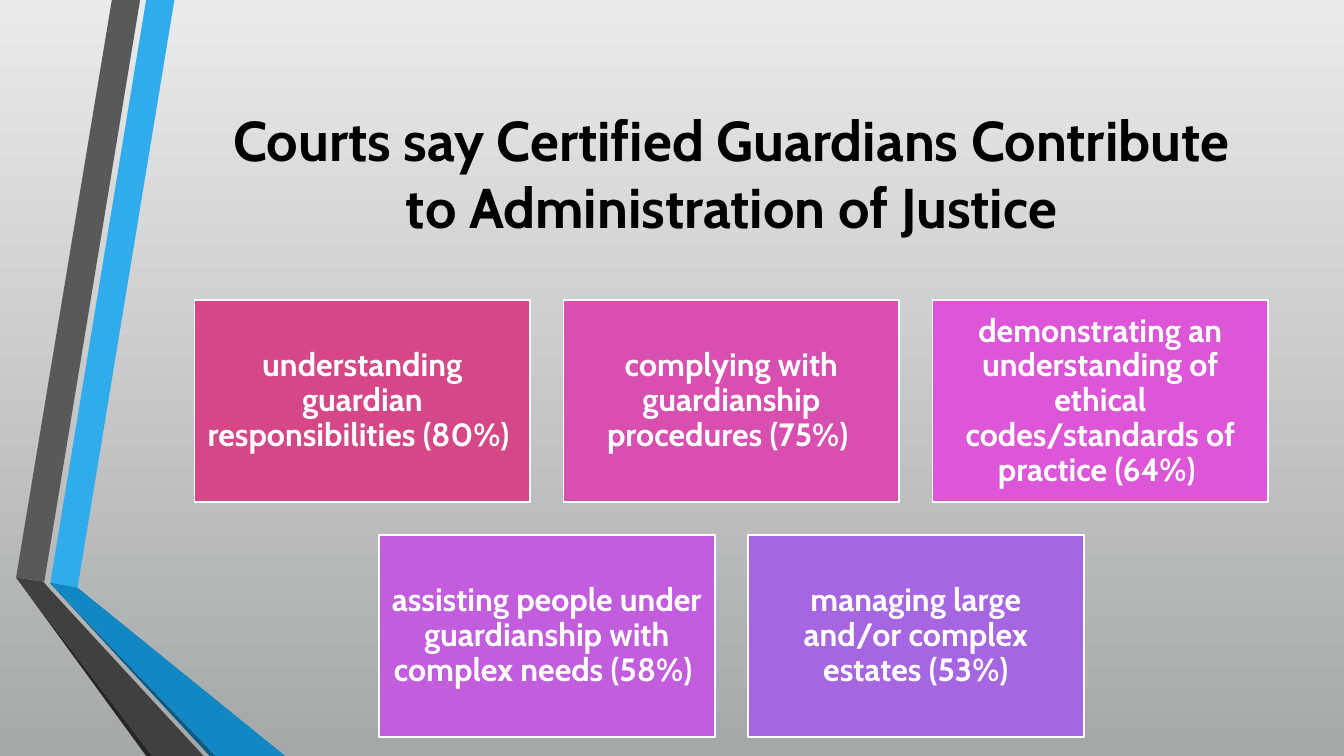
from pptx import Presentation
from pptx.dml.color import RGBColor
from pptx.enum.text import MSO_ANCHOR as Anchor, PP_ALIGN as Align
from pptx.enum.shapes import MSO_SHAPE as Preset
from pptx.util import Inches, Pt

TITLE = "Courts say Certified Guardians Contribute to Administration of Justice"
CARD_ROWS = [
    [
        ("understanding guardian responsibilities (80%) ", "rose"),
        ("complying with guardianship procedures (75%) ", "pink"),
        ("demonstrating an understanding of ethical codes/standards of practice (64%) ", "magenta"),
    ],
    [
        ("assisting people under guardianship with complex needs (58%) ", "orchid"),
        ("managing large and/or complex estates (53%)", "violet"),
    ],
]
COLORS = {
    "sky_top": "E9EAEB", "sky_bottom": "A5A8A9",
    "blue": "30ACEC", "blue_fold": "1287C3", "blue_edge": "0C5A82",
    "gray": "595959", "gray_fold": "404040", "gray_edge": "262626",
    "rose": "D64787", "pink": "D94FB0", "magenta": "DC56D7",
    "orchid": "C25EDE", "violet": "A666E1",
    "black": "000000", "white": "FFFFFF",
}
RIBBONS = [
    ("blue", [(0.5, 5.78), (0.77, 5.83), (1.73, 0), (1.45, 0)]),
    ("gray", [(1.39, 0), (1.11, 0), (0.16, 5.73), (0.44, 5.77)]),
    ("gray_edge", [(0.16, 5.73), (1.45, 7.5), (1.51, 7.5)]),
    ("blue_edge", [(0.5, 5.79), (2.08, 7.5), (2.14, 7.5)]),
    ("blue_fold", [(0.5, 5.78), (0.5, 5.79), (2.14, 7.5), (2.83, 7.5), (0.77, 5.83)]),
    ("gray_fold", [(0.16, 5.73), (1.51, 7.5), (2.02, 7.5), (0.48, 5.83), (0.43, 5.77)]),
]
FONT = "Cabin"
SLIDE_W, SLIDE_H = 13.33, 7.5
LEFT, WIDTH = 1.93, 10.65
TITLE_TOP, TITLE_H = 0.75, 1.92
CARDS_TOP, CARD_W, CARD_H, GAP = 2.98, 3.33, 2, 0.33
UNITS_PER_INCH = 100


def rgb(name):
    return RGBColor.from_string(COLORS[name])


def write(shape, text, size, color, spacing=1.0, inset=0.1):
    frame = shape.text_frame
    frame.word_wrap = True
    frame.vertical_anchor = Anchor.MIDDLE
    frame.margin_left = frame.margin_right = Inches(0.1)
    frame.margin_top = frame.margin_bottom = Inches(inset)
    para = frame.paragraphs[0]
    para.alignment = Align.CENTER
    para.line_spacing = spacing
    span = para.add_run()
    span.text = text
    span.font.name = FONT
    span.font.size = Pt(size)
    span.font.bold = True
    span.font.color.rgb = rgb(color)


def paint(shape, fill, line=None):
    shape.shadow.inherit = False
    shape.fill.solid()
    shape.fill.fore_color.rgb = rgb(fill)
    if line:
        shape.line.color.rgb = rgb(line)
        shape.line.width = Pt(1.25)
    else:
        shape.line.fill.background()


def add_background(page):
    fill = page.background.fill
    fill.gradient()
    fill.gradient_angle = 270
    for stop, name in zip(fill.gradient_stops, ("sky_top", "sky_bottom")):
        stop.color.rgb = rgb(name)
    fill.gradient_stops[0].position = 0
    fill.gradient_stops[1].position = 1


def add_ribbon(page, color, points):
    start, *rest = [(x * UNITS_PER_INCH, y * UNITS_PER_INCH) for x, y in points]
    builder = page.shapes.build_freeform(*start, scale=Inches(1) / UNITS_PER_INCH)
    builder.add_line_segments(rest, close=True)
    paint(builder.convert_to_shape(), color)


def add_cards(page):
    for row, cards in enumerate(CARD_ROWS):
        row_width = len(cards) * CARD_W + (len(cards) - 1) * GAP
        row_left = LEFT + (WIDTH - row_width) / 2
        top = CARDS_TOP + row * (CARD_H + GAP)
        for column, (text, color) in enumerate(cards):
            left = row_left + column * (CARD_W + GAP)
            card = page.shapes.add_shape(
                Preset.RECTANGLE, Inches(left), Inches(top), Inches(CARD_W), Inches(CARD_H))
            paint(card, color, line="white")
            write(card, text, 23, "white", spacing=0.9)


def main():
    deck = Presentation()
    deck.slide_width, deck.slide_height = Inches(SLIDE_W), Inches(SLIDE_H)
    page = deck.slides.add_slide(deck.slide_layouts[6])
    add_background(page)
    for color, points in RIBBONS:
        add_ribbon(page, color, points)
    title = page.shapes.add_textbox(
        Inches(LEFT), Inches(TITLE_TOP), Inches(WIDTH), Inches(TITLE_H))
    write(title, TITLE, 40, "black", inset=0.05)
    add_cards(page)
    deck.save("out.pptx")


if __name__ == "__main__":
    main()
